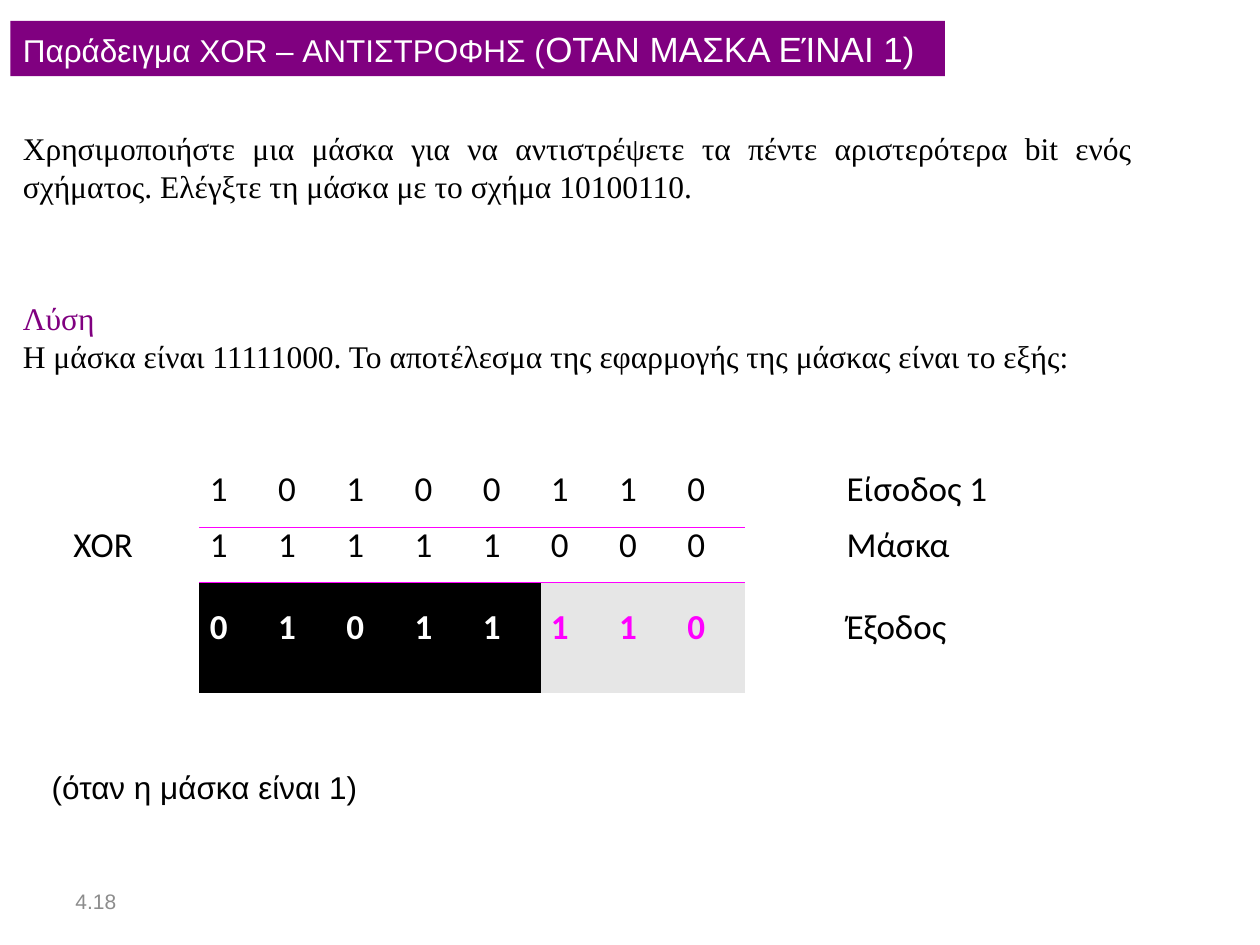
"""Build a slide that shows how an XOR mask inverts bits."""
from dataclasses import dataclass

from lxml.etree import SubElement
from pptx import Presentation
from pptx.dml.color import RGBColor
from pptx.enum.shapes import MSO_SHAPE
from pptx.enum.text import MSO_ANCHOR, MSO_AUTO_SIZE, PP_ALIGN
from pptx.oxml.ns import qn
from pptx.util import Pt


@dataclass(frozen=True)
class Theme:
    black: str = "000000"
    white: str = "FFFFFF"
    purple: str = "800080"
    magenta: str = "FF00FF"
    light: str = "E6E6E6"
    muted: str = "8C8C8C"
    sans: str = "Arial"
    serif: str = "Times New Roman"
    table_font: str = "Calibri"
    small: int = 12
    body: int = 18
    large: int = 20
    plain_table: str = "{2D5ABB26-0587-4C30-8999-92F81FD0307C}"


class SlideBuilder:
    def __init__(self, page, theme):
        self.page = page
        self.theme = theme

    def style(self, font, name, size, color, bold=False):
        font.name, font.size, font.bold = name, Pt(size), bold
        font.color.rgb = RGBColor.from_string(color)

    def banner(self, area, spans):
        box = self.page.shapes.add_shape(MSO_SHAPE.RECTANGLE, *map(Pt, area))
        box.shadow.inherit = False
        box.fill.solid()
        box.fill.fore_color.rgb = RGBColor.from_string(self.theme.purple)
        box.line.fill.background()
        frame = box.text_frame
        frame.word_wrap = False
        frame.auto_size = MSO_AUTO_SIZE.SHAPE_TO_FIT_TEXT
        frame.vertical_anchor = MSO_ANCHOR.TOP
        para = frame.paragraphs[0]
        para.alignment = PP_ALIGN.LEFT
        for text, size in spans:
            span = para.add_run()
            span.text = text
            self.style(span.font, self.theme.sans, size, self.theme.white)

    def text(self, area, lines, font, size, anchor=MSO_ANCHOR.MIDDLE,
             align=PP_ALIGN.LEFT, wrap=True, grow=True):
        frame = self.page.shapes.add_textbox(*map(Pt, area)).text_frame
        frame.word_wrap = wrap
        frame.vertical_anchor = anchor
        if grow:
            frame.auto_size = MSO_AUTO_SIZE.SHAPE_TO_FIT_TEXT
        for index, (line, color) in enumerate(lines):
            para = frame.add_paragraph() if index else frame.paragraphs[0]
            para.text = line
            para.alignment = align
            self.style(para.font, font, size, color)

    def table(self, area, widths, heights, rows, look):
        shape = self.page.shapes.add_table(len(rows), len(widths), *map(Pt, area))
        table = shape.table
        table.first_row = table.horz_banding = False
        shape.element.find(".//" + qn("a:tableStyleId")).text = self.theme.plain_table
        for column, width in zip(table.columns, widths):
            column.width = Pt(width)
        for row, height in zip(table.rows, heights):
            row.height = Pt(height)
        for r, values in enumerate(rows):
            for c, value in enumerate(values):
                self.cell(table.cell(r, c), value, *look(r, c))

    def cell(self, cell, value, color, bold, fill, edges):
        if fill:
            cell.fill.solid()
            cell.fill.fore_color.rgb = RGBColor.from_string(fill)
        else:
            cell.fill.background()
        if value:
            cell.margin_left = cell.margin_right = Pt(6)
            cell.margin_top = cell.margin_bottom = 0
            cell.vertical_anchor = MSO_ANCHOR.MIDDLE
            para = cell.text_frame.paragraphs[0]
            para.text = value
            para.line_spacing = Pt(13)
            para.space_before = para.space_after = Pt(2)
            self.style(para.font, self.theme.table_font, self.theme.large, color, bold)
        self.borders(cell, edges)

    def borders(self, cell, edges):
        properties = cell._tc.get_or_add_tcPr()
        for index, edge in enumerate(edges):
            line = SubElement(properties, qn("a:" + edge), w=str(Pt(1)))
            solid = SubElement(line, qn("a:solidFill"))
            SubElement(solid, qn("a:srgbClr"), val=self.theme.magenta)
            properties.insert(index, line)


def main():
    theme = Theme()
    deck = Presentation()
    deck.slide_width, deck.slide_height = Pt(720), Pt(540)
    slide = SlideBuilder(deck.slides.add_slide(deck.slide_layouts[6]), theme)

    slide.text((36, 500.5, 168, 28.75), [("4.18", theme.muted)],
               theme.sans, theme.small, grow=False)
    slide.banner((6, 12, 534, 31.5), [
        ("Παράδειγμα XOR – ΑΝΤΙΣΤΡΟΦΗΣ (", theme.body),
        ("OTAN ΜΑΣΚΑ ΕΊΝΑΙ 1)", theme.large),
    ])
    slide.text((6, 48, 648, 94.5), [
        ("Χρησιμοποιήστε μια μάσκα για να αντιστρέψετε τα πέντε αριστερότερα "
         "bit ενός σχήματος. Ελέγξτε τη μάσκα με το σχήμα 10100110.", theme.black),
    ], theme.serif, theme.body, align=PP_ALIGN.JUSTIFY)
    slide.text((6, 167, 648, 51), [
        ("Λύση", theme.purple),
        ("Η μάσκα είναι 11111000. Το αποτέλεσμα της εφαρμογής της μάσκας "
         "είναι το εξής:", theme.black),
    ], theme.serif, theme.body, align=PP_ALIGN.JUSTIFY)

    edges = (("lnB",), ("lnT", "lnB"), ("lnT",))

    def look(row, column):
        if not 1 <= column <= 8:
            return theme.black, False, None, ()
        if row < 2:
            return theme.black, False, None, edges[row]
        if column <= 5:
            return theme.white, True, theme.black, edges[row]
        return theme.magenta, True, theme.light, edges[row]

    rows = [
        ["", *"10100110", "", "Είσοδος 1"],
        ["XOR", *"11111000", "", "Μάσκα"],
        ["", *"01011110", "", "Έξοδος"],
    ]
    slide.table((36, 270, 558, 126), [78, *[39] * 8, 52, 116],
                [31.5, 31.5, 63], rows, look)
    slide.text((22.5, 435.5, 196, 29), [("(όταν η μάσκα είναι 1)", theme.black)],
               theme.sans, theme.body, anchor=MSO_ANCHOR.TOP, wrap=False)
    deck.save("out.pptx")


if __name__ == "__main__":
    main()
